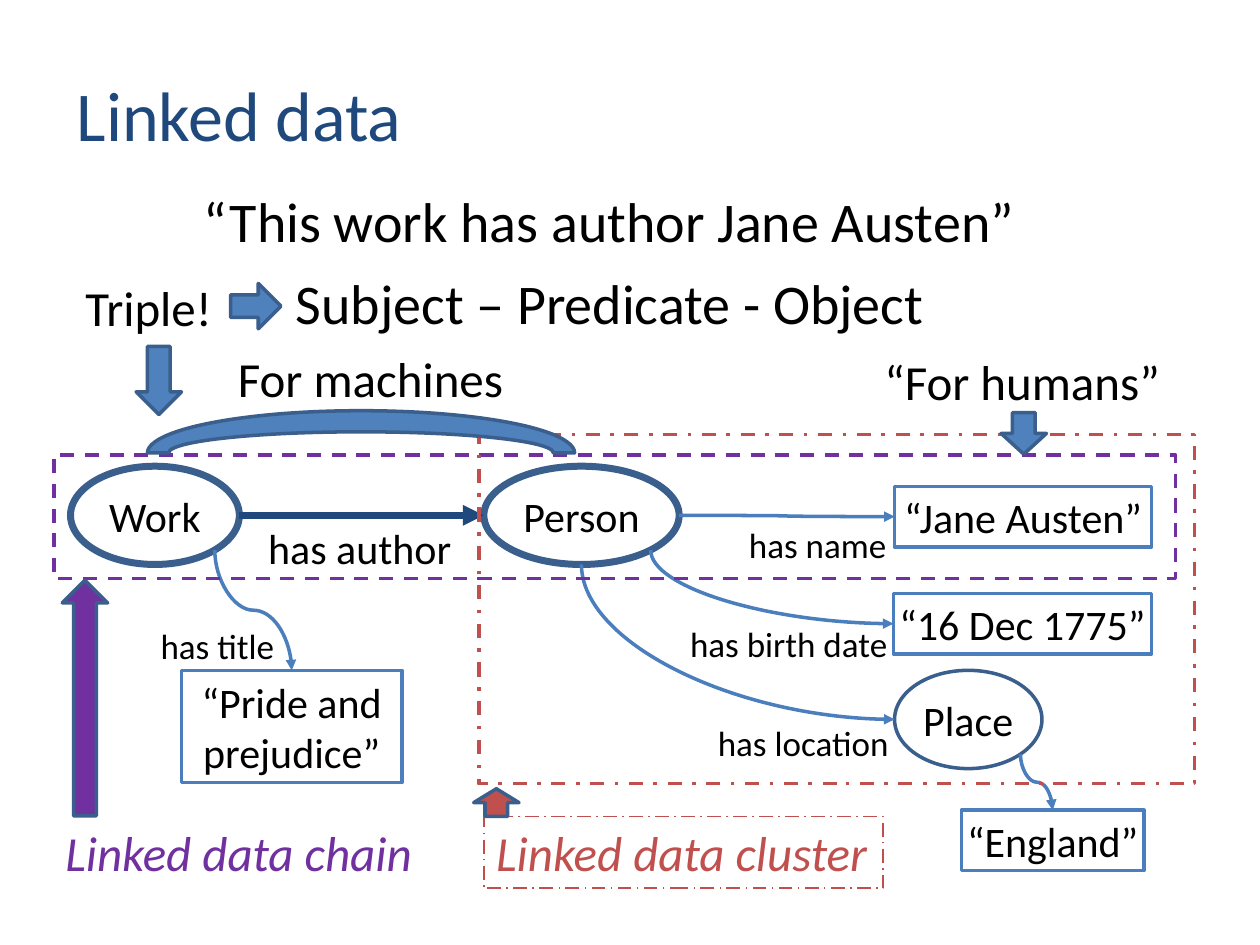
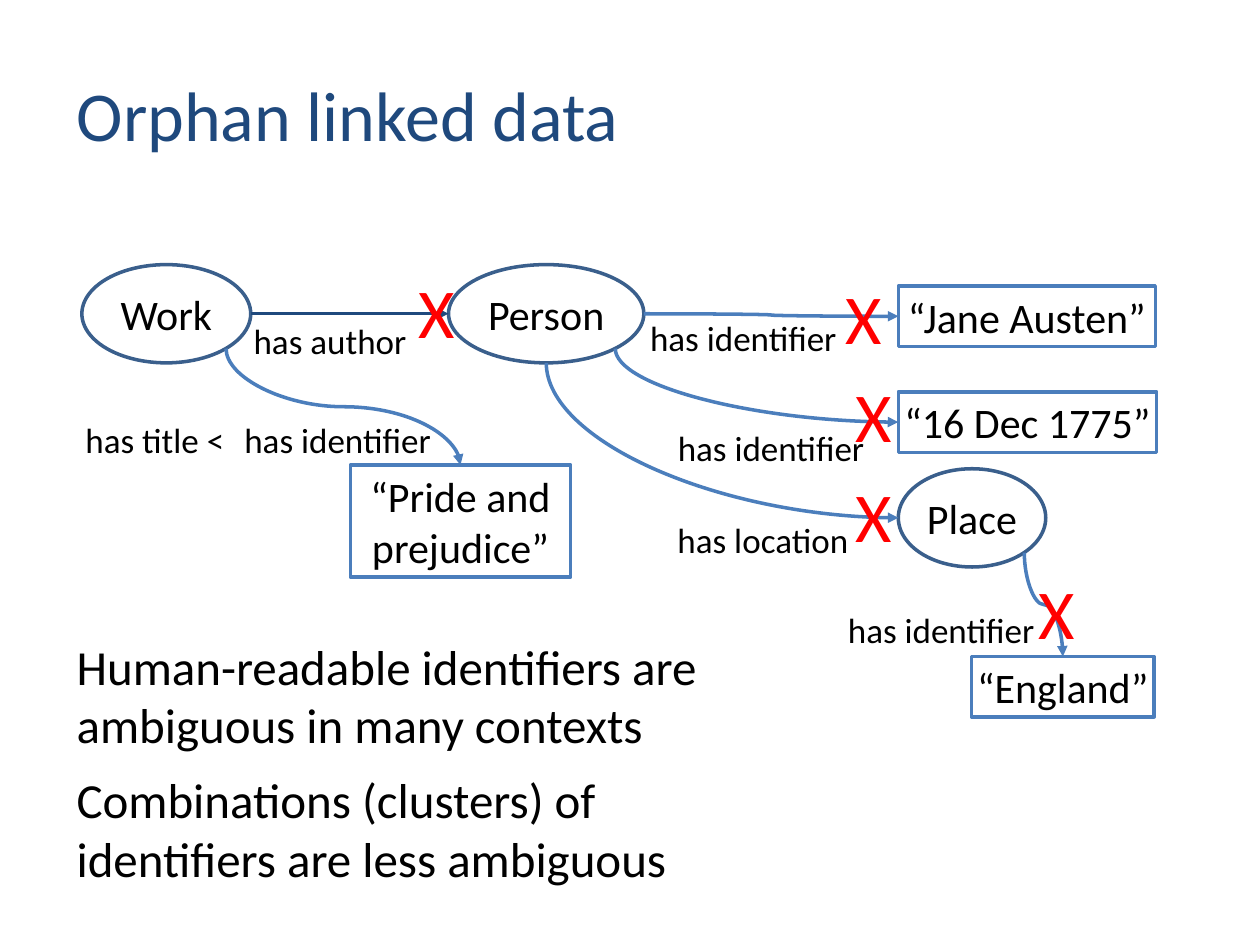
from lxml.etree import SubElement
from pptx import Presentation
from pptx.dml.color import RGBColor
from pptx.enum.dml import MSO_LINE as Dash
from pptx.enum.shapes import MSO_CONNECTOR as Wire, MSO_SHAPE as Form
from pptx.enum.text import MSO_ANCHOR as Anchor, MSO_AUTO_SIZE as Fit, PP_ALIGN as Align
from pptx.oxml.ns import qn
from pptx.util import Cm, Pt

INCH = 2.54
FONT = "Calibri"
BLACK, NAVY, BLUE, EDGE, SKY = "000000", "1F497D", "4F81BD", "3A5F8C", "4B7EBC"
PURPLE, BRICK, RED = "7030A0", "C0504D", "FF0000"
hue = RGBColor.from_string


def box(slide, form, at, text="", size=24, ink=BLACK, fill=None, line=None,
        width=2, dash=None, turn=0, mid=False, wrap=False, slant=False):
    place = [Cm(v * INCH) for v in at]
    if form is None:
        shape = slide.shapes.add_textbox(*place)
    else:
        shape = slide.shapes.add_shape(form, *place)
        shape.shadow.inherit = False
        shape.rotation = turn
        if fill:
            shape.fill.solid()
            shape.fill.fore_color.rgb = hue(fill)
        else:
            shape.fill.background()
        shape.line.color.rgb = hue(line)
        shape.line.width = Pt(width)
        if dash:
            shape.line.dash_style = dash
    if text:
        frame = shape.text_frame
        frame.text = text
        frame.word_wrap = wrap
        frame.auto_size = Fit.NONE
        frame.vertical_anchor = Anchor.MIDDLE if mid else Anchor.TOP
        if mid:
            frame.margin_left = frame.margin_right = Cm(0.1)
            frame.margin_top = frame.margin_bottom = Cm(0.1)
        para = frame.paragraphs[0]
        para.alignment = Align.CENTER if mid else Align.LEFT
        font = para.runs[0].font
        font.name, font.size, font.italic = FONT, Pt(size), slant
        font.color.rgb = hue(ink)
    return shape


def link(slide, start, out, end, into, ink, width):
    (ax, ay), (bx, by) = [
        (s.left + s.width * SITES[k][0], s.top + s.height * SITES[k][1])
        for s, k in ((start, out), (end, into))]
    across, down = bx - ax, by - ay
    falls = out in ("foot", "corner")
    wide, high = (down, across) if falls else (across, down)
    left, top = (ax + bx - wide) / 2, (ay + by - high) / 2
    wire = slide.shapes.add_connector(
        Wire.CURVE, *[int(v) for v in (left, top, left + wide, top + high)])
    wire.line.color.rgb = hue(ink)
    wire.line.width = Pt(width)
    props = wire._element.spPr
    if falls:
        props.xfrm.set("rot", "16200000")
        props.xfrm.set("flipH", "1")
        if into == "left":
            props.find(qn("a:prstGeom")).set("prst", "curvedConnector2")
    SubElement(props.find(qn("a:ln")), qn("a:tailEnd"), type="triangle")
    SubElement(props, qn("a:effectLst"))
    ties = wire._element.find(".//" + qn("p:cNvCxnSpPr"))
    for tag, shape, site in (("a:stCxn", start, out), ("a:endCxn", end, into)):
        oval = shape.auto_shape_type == Form.OVAL
        SubElement(ties, qn(tag), id=str(shape.shape_id), idx=str(SITES[site][2 if oval else 3]))


SITES = {
    "head": (0.5, 0, 0, 0),
    "left": (0, 0.5, 2, 1),
    "foot": (0.5, 1, 4, 2),
    "corner": (0.854, 0.854, 5, 2),
    "right": (1, 0.5, 6, 3),
}
NODES = {
    "Work": (Form.OVAL, 1.34, 0.78),
    "Person": (Form.OVAL, 1.55, 0.78),
    "Place": (Form.OVAL, 1.17, 0.78),
    "“Pride and prejudice”": (Form.RECTANGLE, 1.75, 0.89),
    "“Jane Austen”": (Form.RECTANGLE, 2.04, 0.48),
    "“16 Dec 1775”": (Form.RECTANGLE, 2.05, 0.48),
    "“England”": (Form.RECTANGLE, 1.45, 0.48),
}
LINKS = [
    ("Work", "right", "Person", "left"),
    ("Work", "corner", "“Pride and prejudice”", "head"),
    ("Person", "right", "“Jane Austen”", "left"),
    ("Person", "corner", "“16 Dec 1775”", "left"),
    ("Person", "foot", "Place", "left"),
    ("Place", "corner", "“England”", "head"),
]
PAGES = [
    ("Linked data", 2.8, 4,
     [(0.56, 3.7), (3.84, 3.7), (7.1, 5.32), (1.44, 5.32), (7.1, 3.86), (7.09, 4.71), (7.63, 6.43)],
     [("has author", 2.08, 4.11, 1.55, 24), ("has name", 5.9, 4.12, 1.18, 20),
      ("has birth date", 5.43, 4.91, 1.66, 20), ("has location", 5.65, 5.69, 1.45, 20),
      ("has title", 1.23, 4.92, 0.99, 20)]),
    ("Orphan linked data", 4.54, 2,
     [(0.65, 2.1), (3.56, 2.1), (7.13, 3.72), (2.78, 3.69), (7.13, 2.27), (7.13, 3.11), (7.71, 5.21)],
     [("has author", 1.97, 2.5, 1.3, 20), ("has location", 5.33, 4.08, 1.45, 20),
      ("has identifier", 1.89, 3.29, 1.58, 20), ("has identifier", 5.11, 2.48, 1.58, 20),
      ("has identifier", 5.33, 3.35, 1.58, 20), ("has identifier", 6.68, 4.8, 1.58, 20),
      ("has title <", 0.63, 3.29, 1.2, 20)]),
]

deck = Presentation()
deck.slide_width, deck.slide_height = Cm(25.4), Cm(19.05)

for name, span, bold, spots, notes in PAGES:
    slide = deck.slides.add_slide(deck.slide_layouts[5])
    title = slide.shapes.title
    title.left, title.top, title.width, title.height = [
        Cm(v * INCH) for v in (0.51, 0.52, span, 0.77)]
    frame = title.text_frame
    frame.text = name
    frame.word_wrap = False
    frame.auto_size = Fit.NONE
    frame.vertical_anchor = Anchor.TOP
    frame.paragraphs[0].alignment = Align.LEFT
    font = frame.paragraphs[0].runs[0].font
    font.name, font.size = FONT, Pt(40)
    font.color.rgb = hue(NAVY)

    made = {}
    for (text, (form, wide, high)), (x, y) in zip(NODES.items(), spots):
        oval = form == Form.OVAL
        made[text] = box(slide, form, (x, y, wide, high), text, mid=True,
                         line=EDGE if oval else SKY,
                         width=bold if text in ("Work", "Person") else 2,
                         wrap=text.startswith("“Pride"))
    for start, out, end, into in LINKS:
        main = end == "Person"
        link(slide, made[start], out, made[end], into,
             NAVY if main else SKY, bold if main else 2)
    for text, x, y, wide, size in notes:
        box(slide, None, (x, y, wide, size / 50), text, size, mid=True)

chain, orphan = deck.slides

for text, size, at in [
    ("“This work has author Jane Austen”", 32, (1.52, 1.43, 6.7, 0.64)),
    ("Subject – Predicate - Object", 32, (2.25, 2.08, 5.23, 0.64)),
    ("Triple!", 28, (0.58, 2.15, 1.21, 0.57)),
    ("For machines", 28, (1.79, 2.72, 2.33, 0.57)),
    ("“For humans”", 28, (6.92, 2.74, 2.42, 0.57)),
]:
    box(chain, None, at, text, size)

box(chain, None, (0.42, 6.48, 2.98, 0.57), "Linked data chain", 28, PURPLE, slant=True)
box(chain, Form.RECTANGLE, (3.84, 6.48, 3.17, 0.57), "Linked data cluster", 28, BRICK,
    line=BRICK, width=1, dash=Dash.LONG_DASH_DOT, slant=True)
box(chain, Form.RECTANGLE, (0.43, 3.61, 8.9, 0.98), line=PURPLE, dash=Dash.DASH)
box(chain, Form.RECTANGLE, (3.8, 3.45, 5.68, 2.77), line=BRICK, dash=Dash.DASH_DOT)
box(chain, Form.BLOCK_ARC, (1.17, 3.26, 3.39, 0.67), fill=BLUE, line=EDGE)

for x, y, wide, turn, fill in [
    (1.83, 2.25, 0.4, 0, BLUE),
    (0.99, 2.84, 0.54, 90, BLUE),
    (7.96, 3.26, 0.33, 90, BLUE),
    (-0.26, 5.36, 1.87, 270, PURPLE),
    (3.83, 6.19, 0.22, 270, BRICK),
]:
    box(chain, Form.RIGHT_ARROW, (x, y, wide, 0.36), fill=fill, line=EDGE, turn=turn)

for text, y in [
    ("Human-readable identifiers are ambiguous in many contexts", 5),
    ("Combinations (clusters) of identifiers are less ambiguous", 6.06),
]:
    box(orphan, None, (0.51, y, 5.33, 1.04), text, 28, wrap=True)

for x, y in [(3.22, 2.08), (6.61, 2.13), (6.69, 2.91), (6.69, 3.7), (8.14, 4.47)]:
    box(orphan, None, (x, y, 0.49, 0.77), "X", 40, RED)

deck.save("out.pptx")
